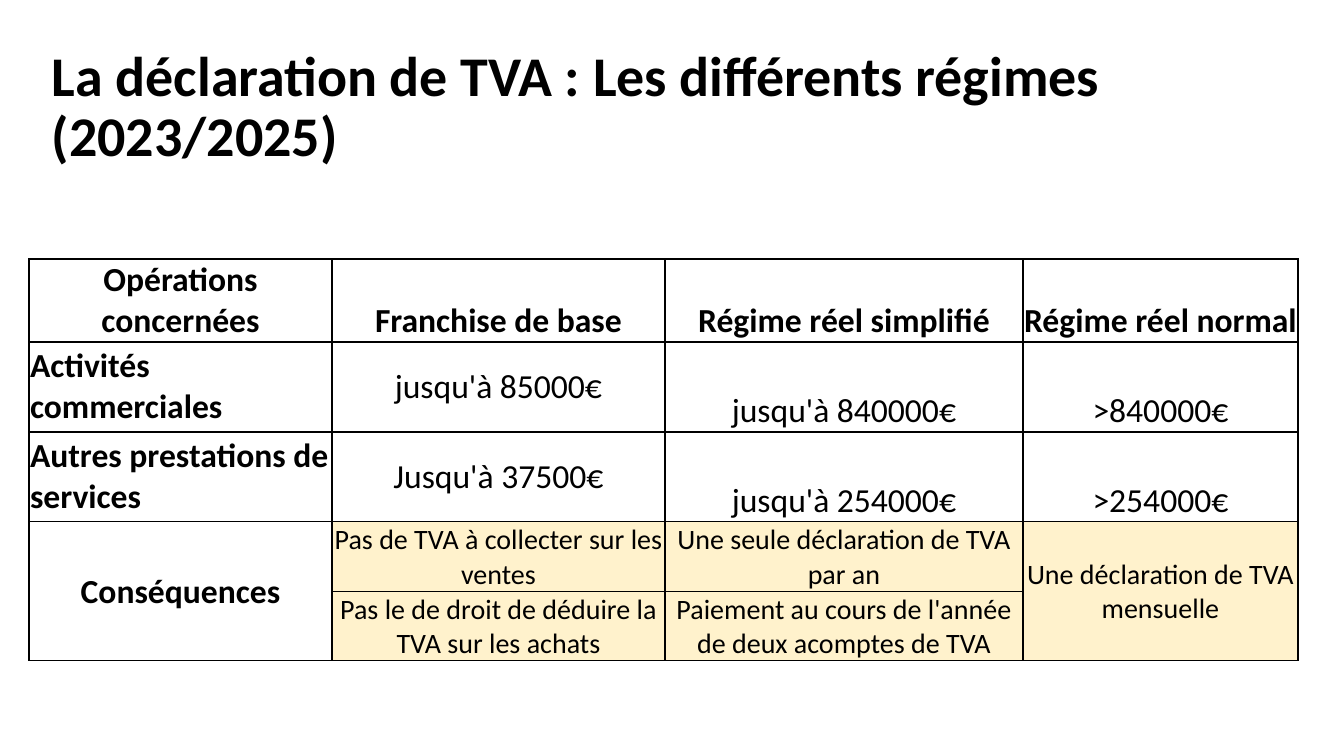
import pptx
import pptx.util
import pptx.dml.color
import pptx.enum.text
import pptx.oxml
import pptx.oxml.ns

BLACK = pptx.dml.color.RGBColor(0x00, 0x00, 0x00)
CREAM = pptx.dml.color.RGBColor(0xFF, 0xF2, 0xCC)
ALIGN = pptx.enum.text.PP_ALIGN
ANCHOR = pptx.enum.text.MSO_ANCHOR

COLS = [303, 333, 358, 275]
ROWS = [83, 90, 90, 70, 69]
TEXTS = [
    ["Opérations concernées", "Franchise de base",
     "Régime réel simplifié", "Régime réel normal"],
    ["Activités commerciales", "jusqu'à 85000€", "jusqu'à 840000€", ">840000€"],
    ["Autres prestations de services", "Jusqu'à 37500€",
     "jusqu'à 254000€", ">254000€"],
    ["Conséquences", "Pas de TVA à collecter sur les ventes",
     "Une seule déclaration de TVA par an", "Une déclaration de TVA mensuelle"],
    ["", "Pas le de droit de déduire la TVA sur les achats",
     "Paiement au cours de l'année de deux acomptes de TVA", ""],
]


def px(count):
    """Turn pixels, 100.8 to the inch, into EMU."""
    return pptx.util.Emu(round(count * 914400 / 100.8))


class Deck:
    font = "Calibri"

    def __init__(self, width, height):
        self.prs = pptx.Presentation()
        self.prs.slide_width = px(width)
        self.prs.slide_height = px(height)
        self.slide = self.prs.slides.add_slide(self.prs.slide_layouts[6])

    def style(self, frame, size, bold, align):
        for para in frame.paragraphs:
            para.alignment = align
            for run in para.runs:
                run.font.name = self.font
                run.font.size = pptx.util.Pt(size)
                run.font.bold = bold
                run.font.color.rgb = BLACK

    def title(self, text, left, top, width, height):
        box = self.slide.shapes.add_textbox(px(left), px(top), px(width), px(height))
        frame = box.text_frame
        frame.word_wrap = True
        frame.vertical_anchor = ANCHOR.MIDDLE
        frame.text = text
        frame.paragraphs[0].line_spacing = 0.9
        self.style(frame, 40, True, ALIGN.LEFT)

    def table(self, left, top, cols, rows):
        """Add an empty table without the banded style."""
        shape = self.slide.shapes.add_table(
            len(rows), len(cols), px(left), px(top), px(sum(cols)), px(sum(rows)))
        grid = shape.table
        grid.first_row = grid.horz_banding = False
        for col, width in zip(grid.columns, cols):
            col.width = px(width)
        for row, height in zip(grid.rows, rows):
            row.height = px(height)
        return grid

    def border(self, cell):
        props = cell._tc.get_or_add_tcPr()
        for spot, side in enumerate(["lnL", "lnR", "lnT", "lnB"]):
            props.insert(spot, pptx.oxml.parse_xml(
                f'<a:{side} {pptx.oxml.ns.nsdecls("a")} w="12700"><a:solidFill>'
                f'<a:srgbClr val="{BLACK}"/></a:solidFill></a:{side}>'))

    def cell(self, cell, text, size, bold, align, anchor, pad, fill):
        """Fill one cell; pad is its top and bottom margin."""
        cell.text = text
        self.style(cell.text_frame, size, bold, align)
        cell.vertical_anchor = anchor
        cell.margin_left = cell.margin_right = px(1)
        cell.margin_top, cell.margin_bottom = (px(edge) for edge in pad)
        if fill is None:
            cell.fill.background()
        else:
            cell.fill.solid()
            cell.fill.fore_color.rgb = fill
        self.border(cell)


def main():
    deck = Deck(1344, 756)
    deck.title("La déclaration de TVA : Les différents régimes (2023/2025)",
               42, 77, 1279, 63)
    grid = deck.table(29, 259, COLS, ROWS)
    for col in (0, 3):
        grid.cell(3, col).merge(grid.cell(4, col))
    for row, texts in enumerate(TEXTS):
        for col, text in enumerate(texts):
            scope = row in (1, 2)
            result = row > 2 and col > 0
            middle = col == 0 or (scope and col == 1) or (row > 2 and col == 3)
            deck.cell(
                grid.cell(row, col), text,
                size=20 if result else 24,
                bold=row == 0 or col == 0,
                align=ALIGN.LEFT if scope and col == 0 else ALIGN.CENTER,
                anchor=ANCHOR.MIDDLE if middle else ANCHOR.BOTTOM,
                pad=(4, 4) if scope and col < 2 else (1, 0),
                fill=CREAM if result else None)
    deck.prs.save("out.pptx")


if __name__ == "__main__":
    main()
